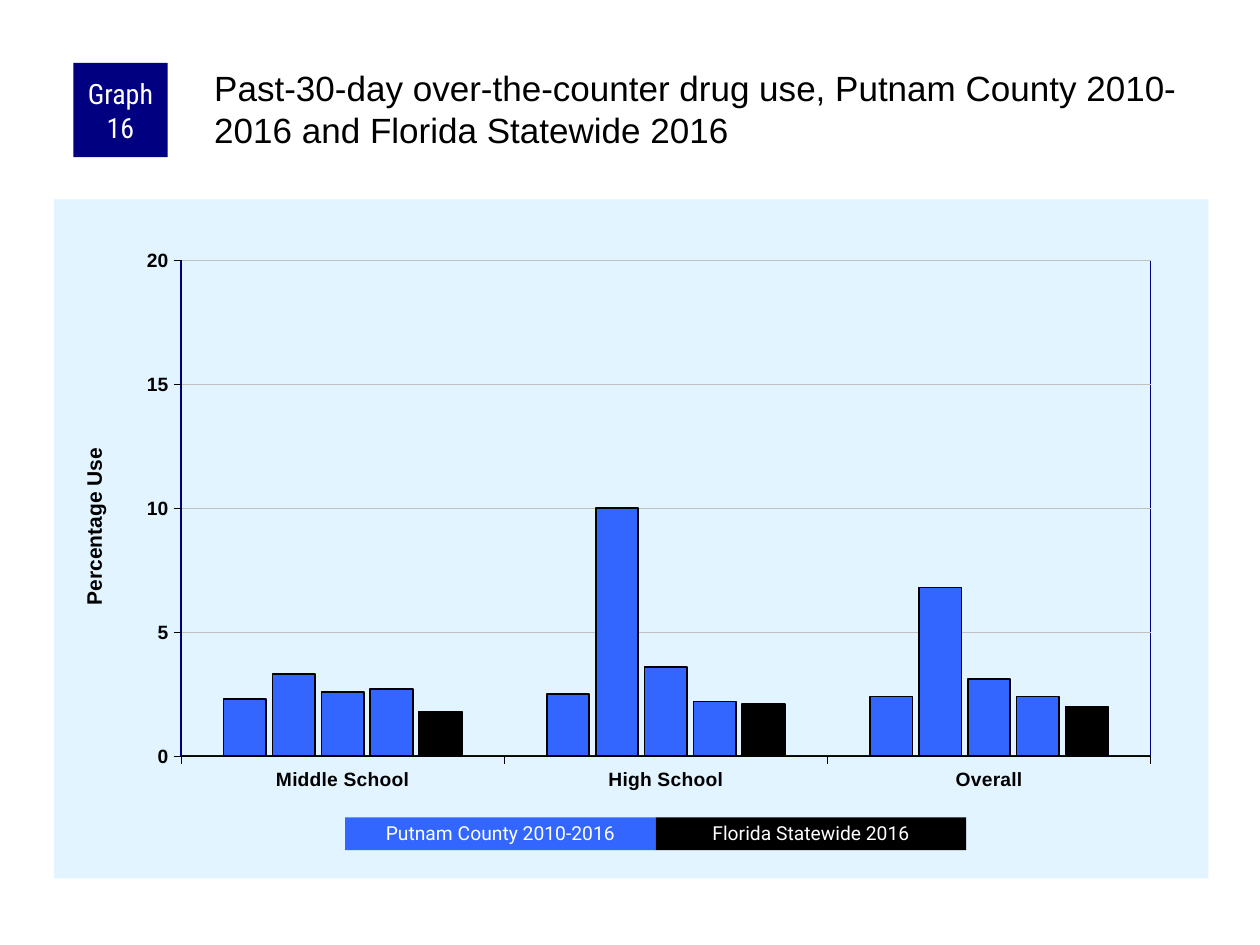
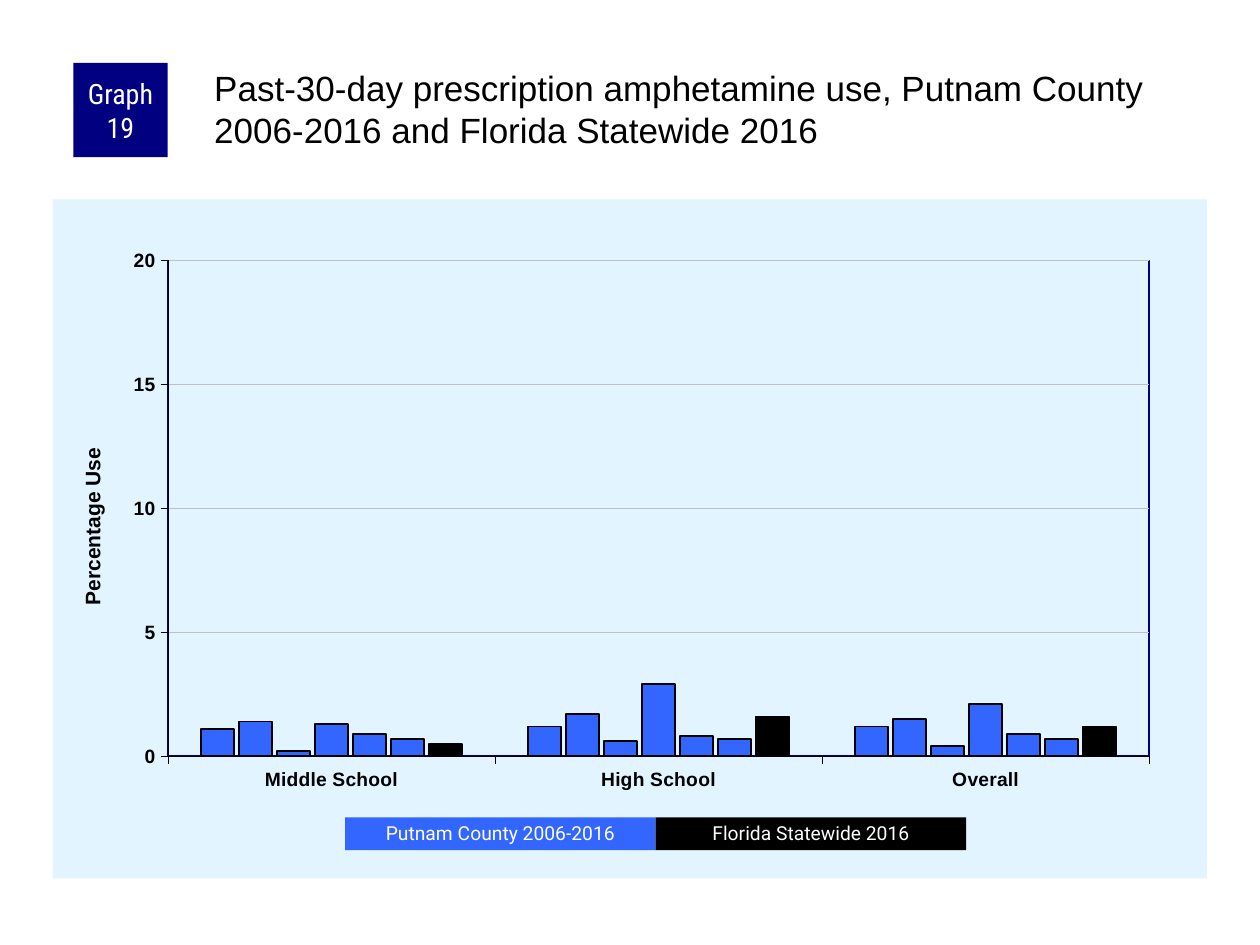
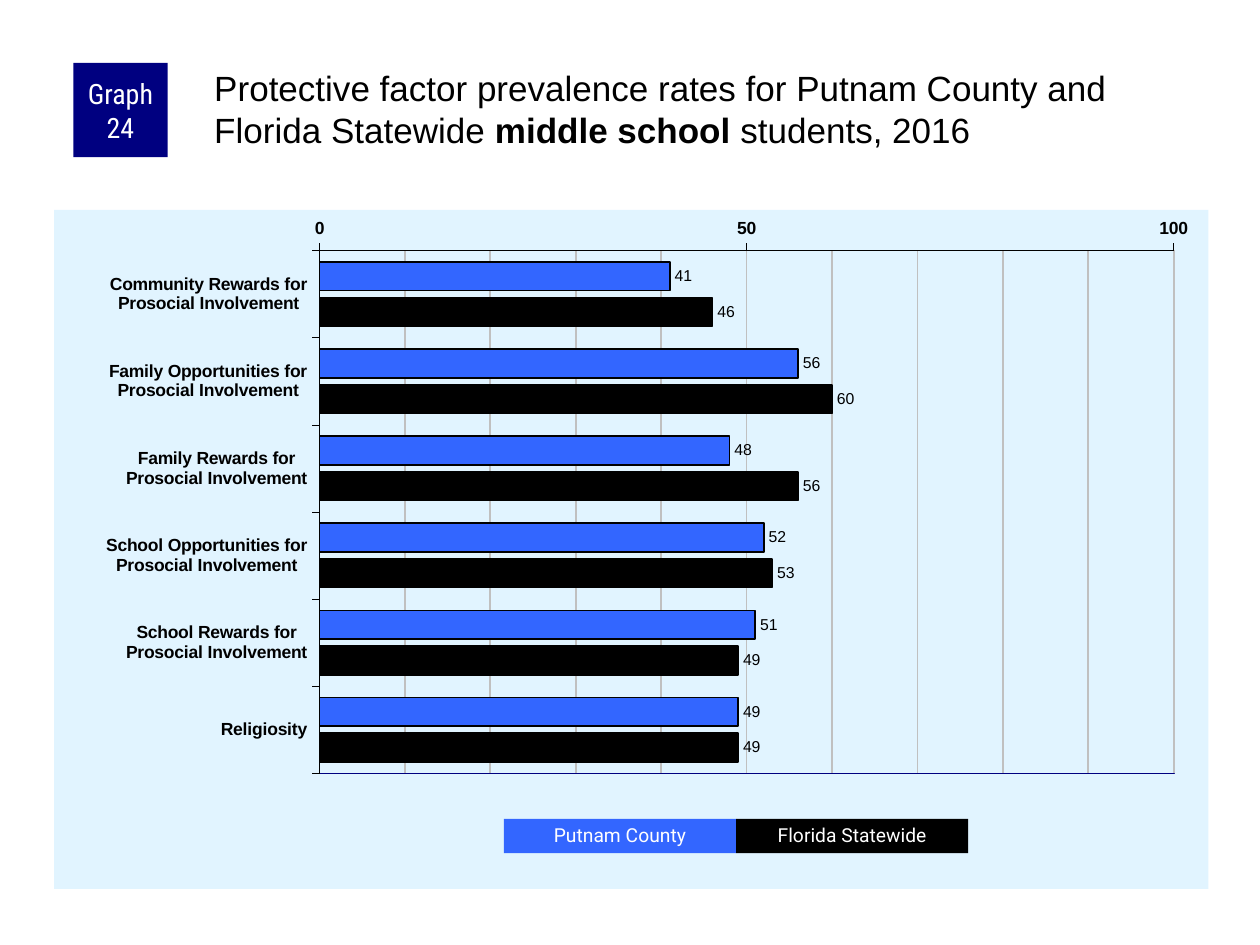
from dataclasses import dataclass

from lxml.etree import SubElement
from pptx import Presentation
from pptx.chart.chart import Chart
from pptx.chart.data import CategoryChartData
from pptx.dml.color import RGBColor
from pptx.enum.chart import (
    XL_AXIS_CROSSES,
    XL_CHART_TYPE,
    XL_LABEL_POSITION,
    XL_TICK_MARK,
)
from pptx.enum.shapes import MSO_SHAPE
from pptx.enum.text import MSO_ANCHOR, PP_ALIGN
from pptx.oxml import parse_xml
from pptx.oxml.ns import nsdecls, qn
from pptx.util import Cm, Pt


@dataclass(frozen=True)
class Theme:
    county: str = "3366FF"
    state: str = "000000"
    navy: str = "000080"
    ink: str = "000000"
    paper: str = "FFFFFF"
    panel: str = "E1F4FF"
    grid: str = "C0C0C0"
    body_font: str = "Arial"
    badge_font: str = "Roboto Condensed"
    legend_font: str = "Roboto"
    title_size: float = 20
    badge_size: float = 16
    axis_title_size: float = 12
    legend_size: float = 11
    label_size: float = 9


THEME = Theme()


@dataclass(frozen=True)
class Frame:
    left: float
    top: float
    width: float
    height: float

    def lengths(self) -> tuple:
        return Cm(self.left), Cm(self.top), Cm(self.width), Cm(self.height)


@dataclass(frozen=True)
class Span:
    text: str
    bold: bool = False


@dataclass(frozen=True)
class ChartStyle:
    kind: XL_CHART_TYPE
    gap: int
    overlap: int
    maximum: float
    major: float
    axis_size: float
    grid_width: float
    legend: Frame
    axis_title: str = ""
    minor: float = 0
    labels: bool = False
    reverse: bool = False


@dataclass(frozen=True)
class GraphPage:
    number: int
    title: tuple[Span, ...]
    style: ChartStyle
    frame: Frame
    plot: tuple[float, ...]
    categories: tuple[str, ...]
    county: tuple[tuple[float, ...], ...]
    state: tuple[float, ...]
    legend: tuple[str, str]


BADGE = Frame(1.48, 1.27, 1.9, 1.9)
TITLE = Frame(4.24, 1.27, 20.12, 2.11)
AXIS_TITLE_SPOT = (0.02, 0.36)

COLUMNS = ChartStyle(
    XL_CHART_TYPE.COLUMN_CLUSTERED, 200, -15, 20, 5, 11, 0.25,
    Frame(6.96, 16.48, 6.26, 0.66), axis_title="Percentage Use",
)
BARS = ChartStyle(
    XL_CHART_TYPE.BAR_CLUSTERED, 80, -25, 100, 50, 10, 1,
    Frame(10.16, 16.51, 4.68, 0.69), minor=10, labels=True, reverse=True,
)
SCHOOLS = ("Middle School", "High School", "Overall")
PROSOCIAL = "\nProsocial Involvement"

PAGES = (
    GraphPage(
        16,
        (Span("Past-30-day over-the-counter drug use, Putnam County 2010-2016 "
              "and Florida Statewide 2016"),),
        COLUMNS,
        Frame(1.09, 4.02, 23.27, 13.69),
        (0.11, 0.09, 0.84, 0.73),
        SCHOOLS,
        ((2.3, 2.5, 2.4), (3.3, 10, 6.8), (2.6, 3.6, 3.1), (2.7, 2.2, 2.4)),
        (1.8, 2.1, 2),
        ("Putnam County 2010-2016", "Florida Statewide 2016"),
    ),
    GraphPage(
        19,
        (Span("Past-30-day prescription amphetamine use, Putnam County 2006-2016 "
              "and Florida Statewide 2016"),),
        COLUMNS,
        Frame(1.06, 4.02, 23.27, 13.69),
        (0.1, 0.09, 0.85, 0.73),
        SCHOOLS,
        ((1.1, 1.2, 1.2), (1.4, 1.7, 1.5), (0.2, 0.6, 0.4),
         (1.3, 2.9, 2.1), (0.9, 0.8, 0.9), (0.7, 0.7, 0.7)),
        (0.5, 1.6, 1.2),
        ("Putnam County 2006-2016", "Florida Statewide 2016"),
    ),
    GraphPage(
        24,
        (Span("Protective factor prevalence rates for Putnam County and "
              "Florida Statewide "),
         Span("middle school ", bold=True),
         Span("students, 2016")),
        BARS,
        Frame(1.09, 4.23, 23.27, 13.69),
        (0.23, 0.06, 0.74, 0.77),
        tuple(f"{factor} for{PROSOCIAL}" for factor in (
            "Community Rewards", "Family Opportunities", "Family Rewards",
            "School Opportunities", "School Rewards")) + ("Religiosity",),
        ((41, 56, 48, 52, 51, 49),),
        (46, 60, 56, 53, 49, 49),
        ("Putnam County", "Florida Statewide"),
    ),
)


def format_font(font, *, size: float, color: str = THEME.ink,
                name: str = THEME.body_font, bold: bool = False) -> None:
    font.name = name
    font.size = Pt(size)
    font.bold = bold
    font.color.rgb = RGBColor.from_string(color)


def format_line(line, color: str, width: float) -> None:
    line.color.rgb = RGBColor.from_string(color)
    line.width = Pt(width)


def write_text(frame, spans: tuple[Span, ...], *, size: float, color: str, name: str,
               align: PP_ALIGN = PP_ALIGN.LEFT, anchor: MSO_ANCHOR = MSO_ANCHOR.TOP,
               spacing: float = 1.0,
               insets: tuple[float, ...] = (0.25, 0.13, 0.25, 0.13)) -> None:
    frame.word_wrap = True
    frame.vertical_anchor = anchor
    frame.margin_left, frame.margin_top, frame.margin_right, frame.margin_bottom = map(
        Cm, insets)
    para = frame.paragraphs[0]
    para.alignment = align
    para.line_spacing = spacing
    for part in spans:
        span = para.add_run()
        span.text = part.text
        format_font(span.font, size=size, color=color, name=name, bold=part.bold)


def add_label_box(page, frame: Frame, text: str, fill: str, **text_format) -> None:
    box = page.shapes.add_shape(MSO_SHAPE.RECTANGLE, *frame.lengths())
    box.shadow.inherit = False
    box.fill.solid()
    box.fill.fore_color.rgb = RGBColor.from_string(fill)
    box.line.fill.background()
    write_text(box.text_frame, (Span(text),), color=THEME.paper,
               align=PP_ALIGN.CENTER, anchor=MSO_ANCHOR.MIDDLE, **text_format)


def set_layout(parent, index: int, *, inner: bool = False, **edges: float) -> None:
    for old in parent.findall(qn("c:layout")):
        parent.remove(old)
    layout = parse_xml(f"<c:layout {nsdecls('c')}/>")
    manual = SubElement(layout, qn("c:manualLayout"))
    settings = {"layoutTarget": "inner"} if inner else {}
    settings |= {"xMode": "edge", "yMode": "edge"} | edges
    for tag, value in settings.items():
        SubElement(manual, qn(f"c:{tag}")).set("val", str(value))
    parent.insert(index, layout)


def area_format(fill: str, line: str):
    return parse_xml(f"<c:spPr {nsdecls('c', 'a')}>{fill}{line}</c:spPr>")


def solid(color: str) -> str:
    return f'<a:solidFill><a:srgbClr val="{color}"/></a:solidFill>'


def outline(color: str, width: float) -> str:
    return f'<a:ln w="{int(Pt(width))}">{solid(color)}</a:ln>'


def style_areas(chart: Chart, plot: tuple[float, ...]) -> None:
    chart_node = chart.element.find(qn("c:chart"))
    chart_node.addnext(area_format(solid(THEME.panel), "<a:ln><a:noFill/></a:ln>"))
    plot_area = chart_node.find(qn("c:plotArea"))
    set_layout(plot_area, 0, inner=True, **dict(zip("xywh", plot)))
    plot_area.append(area_format("<a:noFill/>", outline(THEME.navy, 1)))


def style_axes(chart: Chart, style: ChartStyle) -> None:
    values, categories = chart.value_axis, chart.category_axis
    value_node = next(chart.element.iter(qn("c:valAx")))
    for axis in (values, categories):
        axis.major_tick_mark = XL_TICK_MARK.OUTSIDE
        axis.minor_tick_mark = XL_TICK_MARK.NONE
        format_font(axis.tick_labels.font, size=style.axis_size, bold=True)
        format_line(axis.format.line, THEME.ink, 0.25)
    values.minimum_scale = 0
    values.maximum_scale = style.maximum
    values.major_unit = style.major
    values.has_major_gridlines = True
    format_line(values.major_gridlines.format.line, THEME.grid, style.grid_width)
    if style.minor:
        values.minor_unit = style.minor
        values.has_minor_gridlines = True
        value_node.find(qn("c:minorGridlines")).append(
            area_format("", outline(THEME.grid, style.grid_width)))
    if style.reverse:
        categories.reverse_order = True
        categories.crosses = XL_AXIS_CROSSES.MAXIMUM
    if style.axis_title:
        span = values.axis_title.text_frame.paragraphs[0].add_run()
        span.text = style.axis_title
        format_font(span.font, size=THEME.axis_title_size, bold=True)
        left, top = AXIS_TITLE_SPOT
        set_layout(value_node.find(qn("c:title")), 1, x=left, y=top)


def style_series(chart: Chart, style: ChartStyle) -> None:
    plot = chart.plots[0]
    plot.gap_width = style.gap
    plot.overlap = style.overlap
    plot.vary_by_categories = False
    *county, state = plot.series
    for series in (*county, state):
        color = THEME.state if series is state else THEME.county
        series.invert_if_negative = False
        series.format.fill.solid()
        series.format.fill.fore_color.rgb = RGBColor.from_string(color)
        format_line(series.format.line, THEME.ink, 1)
    if style.labels:
        plot.has_data_labels = True
        plot.data_labels.show_value = True
        plot.data_labels.position = XL_LABEL_POSITION.OUTSIDE_END
        format_font(plot.data_labels.font, size=THEME.label_size)


def add_graph(page, graph: GraphPage) -> None:
    data = CategoryChartData()
    data.categories = graph.categories
    for index, values in enumerate((*graph.county, graph.state), start=1):
        data.add_series(f"Series {index}", values)
    chart = page.shapes.add_chart(graph.style.kind, *graph.frame.lengths(), data).chart
    chart.has_legend = False
    chart.has_title = False
    format_font(chart.font, size=THEME.label_size)
    style_areas(chart, graph.plot)
    style_axes(chart, graph.style)
    style_series(chart, graph.style)


def add_legend(page, graph: GraphPage) -> None:
    first = graph.style.legend
    for index, (text, fill) in enumerate(zip(graph.legend, (THEME.county, THEME.state))):
        frame = Frame(first.left + index * first.width, first.top,
                      first.width, first.height)
        add_label_box(page, frame, text, fill, size=THEME.legend_size,
                      name=THEME.legend_font, spacing=0.9)


def add_page(deck, graph: GraphPage) -> None:
    page = deck.slides.add_slide(deck.slide_layouts[6])
    add_graph(page, graph)
    add_label_box(page, BADGE, f"Graph {graph.number}", THEME.navy,
                  size=THEME.badge_size, name=THEME.badge_font,
                  insets=(0.13, 0, 0.13, 0))
    box = page.shapes.add_textbox(*TITLE.lengths())
    write_text(box.text_frame, graph.title, size=THEME.title_size, color=THEME.ink,
               name=THEME.body_font, insets=(0.08, 0.08, 0, 0))
    add_legend(page, graph)


def main() -> None:
    deck = Presentation()
    deck.slide_width, deck.slide_height = Cm(25.4), Cm(19.05)
    for graph in PAGES:
        add_page(deck, graph)
    deck.save("out.pptx")


if __name__ == "__main__":
    main()
